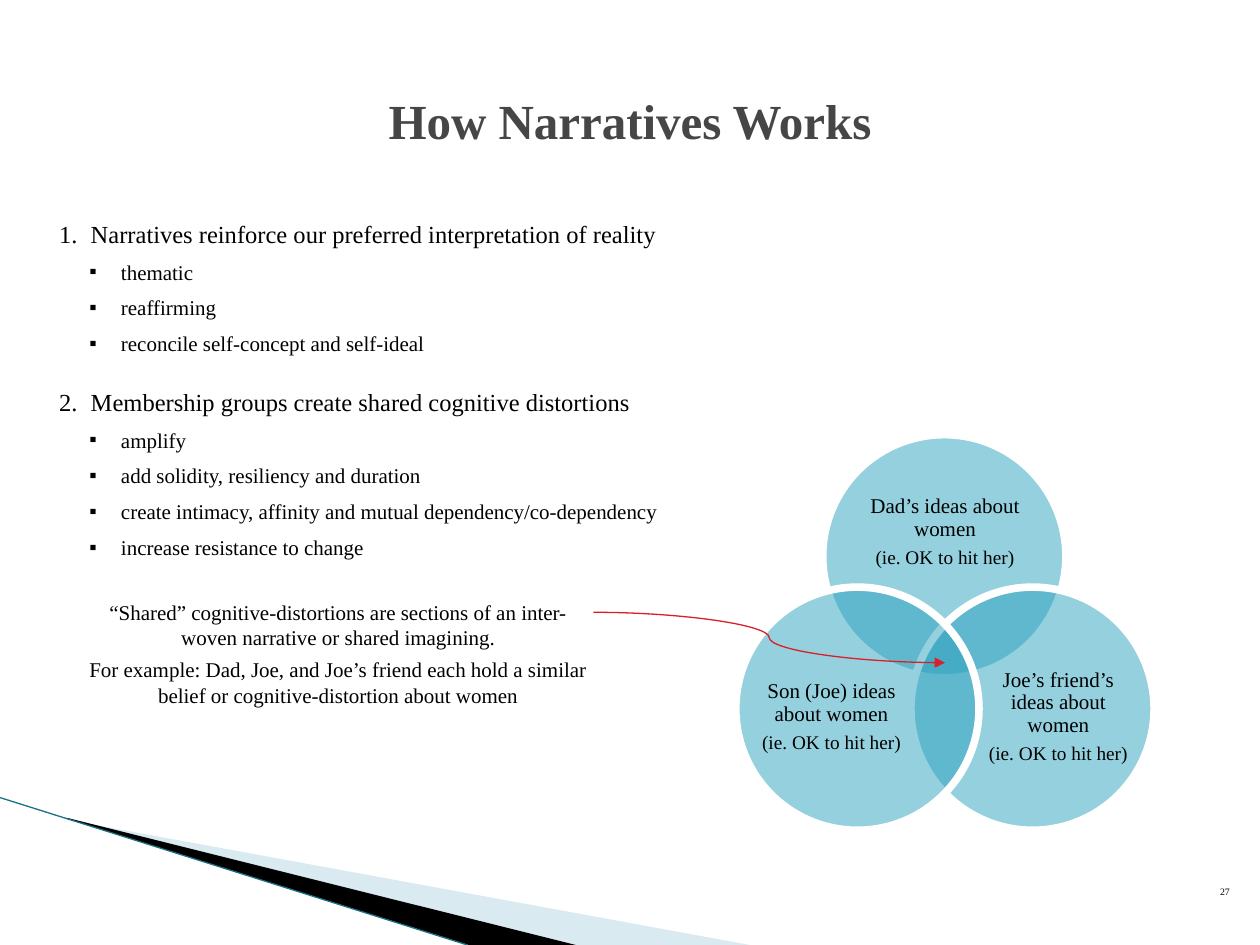
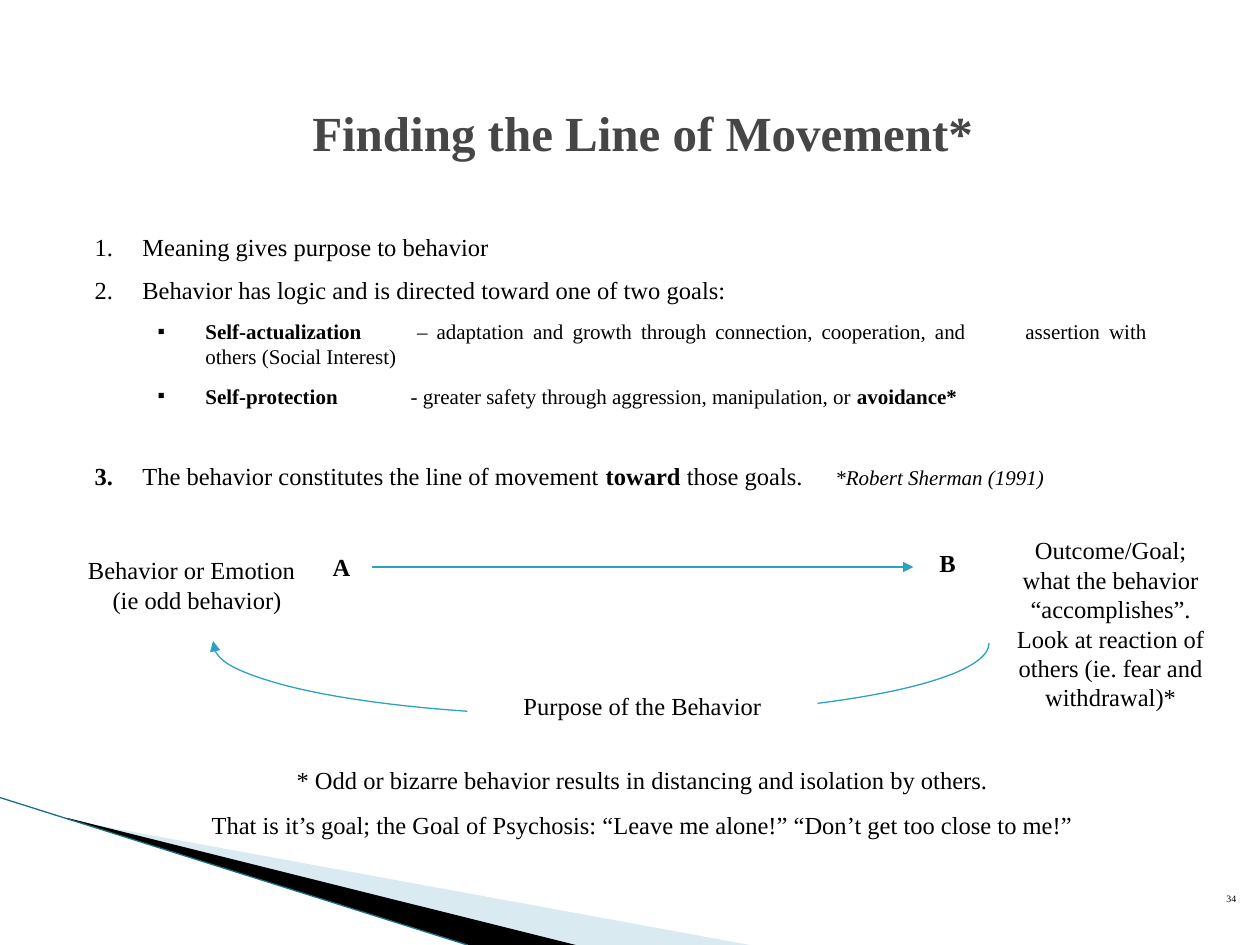
"""Build two slides on narratives and the line of movement."""
from lxml import etree
from pptx import Presentation
from pptx import util as u
from pptx.dml.color import RGBColor
from pptx.enum import shapes, text
from pptx.oxml.ns import qn

PX = 9144
THEME = dict(
    font="Times New Roman", ink="000000", head="464646", teal="2DA2BF",
    red="DA1F28", white="FFFFFF", pale="A0CBDC", edge="1B7085",
    title=28, main=14, sub=12, note=11, page=5.6, thin=0.75, ring=4.33)
MID, LEFT, RIGHT, FULL = (text.PP_ALIGN.CENTER, text.PP_ALIGN.LEFT,
                          text.PP_ALIGN.RIGHT, text.PP_ALIGN.JUSTIFY)
ANCHOR = text.MSO_ANCHOR
BOLD = dict(bold=True)

WEDGES = [
    ([(55, 651), (595, 750), (456, 750), (55, 650)], "pale", 40),
    ([(53, 649), (457, 750), (372, 750), (54, 650)], "ink", 100),
]
EDGE = (0, 633, 371, 750)

WORKS = dict(
    title="How Narratives Works", head=(50, 33, 900, 125),
    page="27", foot=(946, 677, 40, 40),
    body=(37, 169, 926, 495), hang=25, deep=(25, 49), after=6,
    items=[
        dict(num=1, runs="Narratives reinforce our preferred interpretation of reality"),
        dict(runs="thematic"),
        dict(runs="reaffirming"),
        dict(runs="reconcile self-concept and self-ideal", after=18),
        dict(num=2, runs="Membership groups create shared cognitive distortions"),
        dict(runs="amplify"),
        dict(runs="add solidity, resiliency and duration"),
        dict(runs="create intimacy, affinity and mutual dependency/co-dependency"),
        dict(runs="increase resistance to change"),
    ])
RING = 193
VENN = [
    ((653, 345), (679, 379, 142, 87), "Dad’s ideas about women"),
    ((723, 466), (782, 516, 116, 106), "Joe’s friend’s ideas about women"),
    ((584, 466), (602, 516, 116, 106), "Son (Joe) ideas about women"),
]
BELIEF = "(ie. OK to hit her)"
POINTER = (471, 486, 750, 526)
SHARED = (58, 471, 421, 96), [
    "“Shared” cognitive-distortions are sections of an inter-woven narrative or shared imagining.",
    "For example: Dad, Joe, and Joe’s friend each hold a similar belief or cognitive-distortion about women"]

MOVES = dict(
    title="Finding the Line of Movement*", head=(60, 42, 900, 125),
    page="34", foot=(929, 612, 62, 111),
    body=(35, 179, 885, 218), hang=38, deep=(68, 118), after=8,
    items=[
        dict(num=1, runs="Meaning gives purpose to behavior"),
        dict(num=2, runs="Behavior has logic and is directed toward one of two goals:"),
        dict(tabs=[286, 765], runs=[
            ("Self-actualization\t", BOLD),
            ("– adaptation and growth through connection, cooperation, and\tassertion with others (Social Interest)", {})]),
        dict(tabs=[281], runs=[
            ("Self-protection\t", BOLD),
            ("- greater safety through aggression, manipulation, or ", {}),
            ("avoidance*", BOLD)]),
        dict(num=0, before=22, tabs=[69, 622], runs=[
            ("3.\t", BOLD),
            ("The behavior constitutes the line of movement ", {}),
            ("toward", BOLD), (" those goals.\t", {}),
            ("*Robert Sherman (1991)", dict(italic=True, size=u.Pt(THEME["sub"])))]),
    ])
LABELS = [
    ((214, 433, 114, 34), ["A"], dict(bold=True)),
    ((695, 430, 114, 34), ["B"], dict(bold=True)),
    ((794, 420, 175, 151), ["Outcome/Goal; what the behavior “accomplishes”. Look at reaction of others (ie. fear and withdrawal)*"], {}),
]
START = (60, 436, 193, 57), ["Behavior or Emotion", "(ie odd behavior)"]
PATH = (295, 450, 725, 450)
LOOP, SWEEP = (169, 453, 616, 115), (107.8, 0)
PURPOSE = (371, 540, 278, 40), "Purpose of the Behavior"
CLOSE = (60, 591, 900, 77), [
    "* Odd or bizarre behavior results in distancing and isolation by others.",
    "That is it’s goal; the Goal of Psychosis: “Leave me alone!” “Don’t get too close to me!”"]


def apply(obj, vals):
    """Set every attribute named in vals."""
    for name, val in vals.items():
        setattr(obj, name, val)


def emu(nums):
    """Turn px lengths into EMU."""
    return [n * PX for n in nums]


def tint(name):
    """Return a theme colour."""
    return RGBColor.from_string(THEME[name])


def add(node, tag, **attrs):
    """Append an XML child with attributes."""
    kid = etree.SubElement(node, qn(tag))
    for key, val in attrs.items():
        kid.set(key, str(val))
    return kid


def write(para, runs, size="main", ink="ink", **extra):
    """Write one paragraph from a string or a list of runs."""
    for words, fmt in [(runs, {})] if isinstance(runs, str) else runs:
        run = para.add_run()
        run.text = words
        apply(run.font, dict(name=THEME["font"], size=u.Pt(THEME[size]), **extra) | fmt)
        run.font.color.rgb = tint(ink)


def nth(frame, idx):
    """Return the first paragraph or a new one."""
    return frame.add_paragraph() if idx else frame.paragraphs[0]


def box(slide, area, lines, align=MID, anchor=ANCHOR.TOP, inset=None, fmt=None, **look):
    """Add a wrapped text box with one paragraph a line."""
    frame = slide.shapes.add_textbox(*emu(area)).text_frame
    apply(frame, dict(word_wrap=True, vertical_anchor=anchor))
    if inset is not None:
        apply(frame, {"margin_" + side: inset for side in ("left", "top", "right", "bottom")})
    for idx, line in enumerate(lines):
        para = nth(frame, idx)
        apply(para, dict(alignment=align) | (fmt or {}))
        write(para, line, **look)
    return frame


def paint(shape, fill=None, alpha=100, line=None, width="thin"):
    """Set fill, outline and no shadow."""
    shape.shadow.inherit = False
    if fill:
        shape.fill.solid()
        shape.fill.fore_color.rgb = tint(fill)
        if alpha < 100:
            clr = shape.fill._xPr.find(".//" + qn("a:srgbClr"))
            add(clr, "a:alpha", val=alpha * 1000)
    else:
        shape.fill.background()
    if line:
        shape.line.color.rgb = tint(line)
        shape.line.width = u.Pt(THEME[width])
    else:
        shape.line.fill.background()


def link(slide, ends, color, kind=shapes.MSO_CONNECTOR.STRAIGHT, arrow=True):
    """Add a connector between two points."""
    wire = slide.shapes.add_connector(kind, *emu(ends))
    wire.line.color.rgb = tint(color)
    wire.line.width = u.Pt(THEME["thin"])
    if arrow:
        add(wire.line._get_or_add_ln(), "a:tailEnd", type="triangle")
    add(wire._element.spPr, "a:effectLst")


def bullets(frame, data):
    """Fill the body with numbered heads and square bullets."""
    apply(frame, dict(auto_size=text.MSO_AUTO_SIZE.NONE, word_wrap=True))
    for idx, item in enumerate(data["items"]):
        para, top = nth(frame, idx), "num" in item
        apply(para, dict(
            level=0 if top else 1, alignment=FULL,
            space_before=u.Pt(item.get("before", 0)),
            space_after=u.Pt(item.get("after", data["after"]))))
        ppr = para._p.get_or_add_pPr()
        ppr.set("marL", str(data["deep"][not top] * PX))
        ppr.set("indent", str(-data["hang"] * PX))
        if not top:
            add(ppr, "a:buFont", typeface=THEME["font"])
            add(ppr, "a:buChar", char="▪")
        elif item["num"]:
            add(ppr, "a:buFont", typeface=THEME["font"])
            add(ppr, "a:buAutoNum", type="arabicPeriod", startAt=item["num"])
        else:
            add(ppr, "a:buNone")
        if "tabs" in item:
            stops = add(ppr, "a:tabLst")
            for pos in item["tabs"]:
                add(stops, "a:tab", pos=pos * PX, algn="l")
        write(para, item["runs"], "main" if top else "sub")


def base(deck, data):
    """Add a slide with title, list, corner wedges and page number."""
    slide = deck.slides.add_slide(deck.slide_layouts[1])
    for pts, fill, alpha in WEDGES:
        pen = slide.shapes.build_freeform(*pts[0], scale=PX)
        pen.add_line_segments(pts[1:])
        paint(pen.convert_to_shape(), fill, alpha)
    link(slide, EDGE, "edge", arrow=False)
    title, body = slide.placeholders
    for hold, key in ((title, "head"), (body, "body")):
        apply(hold, dict(zip(("left", "top", "width", "height"), emu(data[key]))))
    apply(title.text_frame, dict(vertical_anchor=ANCHOR.MIDDLE, auto_size=text.MSO_AUTO_SIZE.NONE))
    para = title.text_frame.paragraphs[0]
    para.alignment = MID
    write(para, data["title"], "title", "head", bold=True)
    bullets(body.text_frame, data)
    box(slide, data["foot"], [data["page"]], RIGHT, ANCHOR.BOTTOM, size="page")
    return slide


def works(deck):
    """Build the slide with three shared circles."""
    slide = base(deck, WORKS)
    tight = dict(line_spacing=0.9, space_after=u.Pt(4))
    for spot, area, idea in VENN:
        disc = slide.shapes.add_shape(shapes.MSO_SHAPE.OVAL, *emu((*spot, RING, RING)))
        paint(disc, "teal", 50, "white", "ring")
        small = [(BELIEF, dict(size=u.Pt(THEME["note"])))]
        box(slide, area, [idea, small], anchor=ANCHOR.MIDDLE, inset=0, fmt=tight, size="sub")
    link(slide, POINTER, "red", shapes.MSO_CONNECTOR.CURVE)
    box(slide, *SHARED, fmt=dict(space_after=u.Pt(4)), size="sub")


def moves(deck):
    """Build the slide with the path from A to B and back."""
    slide = base(deck, MOVES)
    link(slide, PATH, "teal")
    for area, lines, look in LABELS:
        box(slide, area, lines, **look)
    box(slide, *START).paragraphs[0].alignment = LEFT
    arc = slide.shapes.add_shape(shapes.MSO_SHAPE.ARC, *emu(LOOP))
    for idx, turn in enumerate(SWEEP):
        arc.adjustments[idx] = turn
    arc._element.spPr.xfrm.set("flipV", "1")
    paint(arc, line="teal")
    add(arc.line._get_or_add_ln(), "a:headEnd", type="triangle")
    area, words = PURPOSE
    plate = slide.shapes.add_shape(shapes.MSO_SHAPE.RECTANGLE, *emu(area))
    paint(plate, "white")
    plate.text_frame.vertical_anchor = ANCHOR.MIDDLE
    para = plate.text_frame.paragraphs[0]
    para.alignment = MID
    write(para, words)
    box(slide, *CLOSE, fmt=dict(line_spacing=1.5))


def main():
    """Build and save the deck."""
    deck = Presentation()
    apply(deck, dict(slide_width=1000 * PX, slide_height=750 * PX))
    works(deck)
    moves(deck)
    deck.save("out.pptx")


if __name__ == "__main__":
    main()
